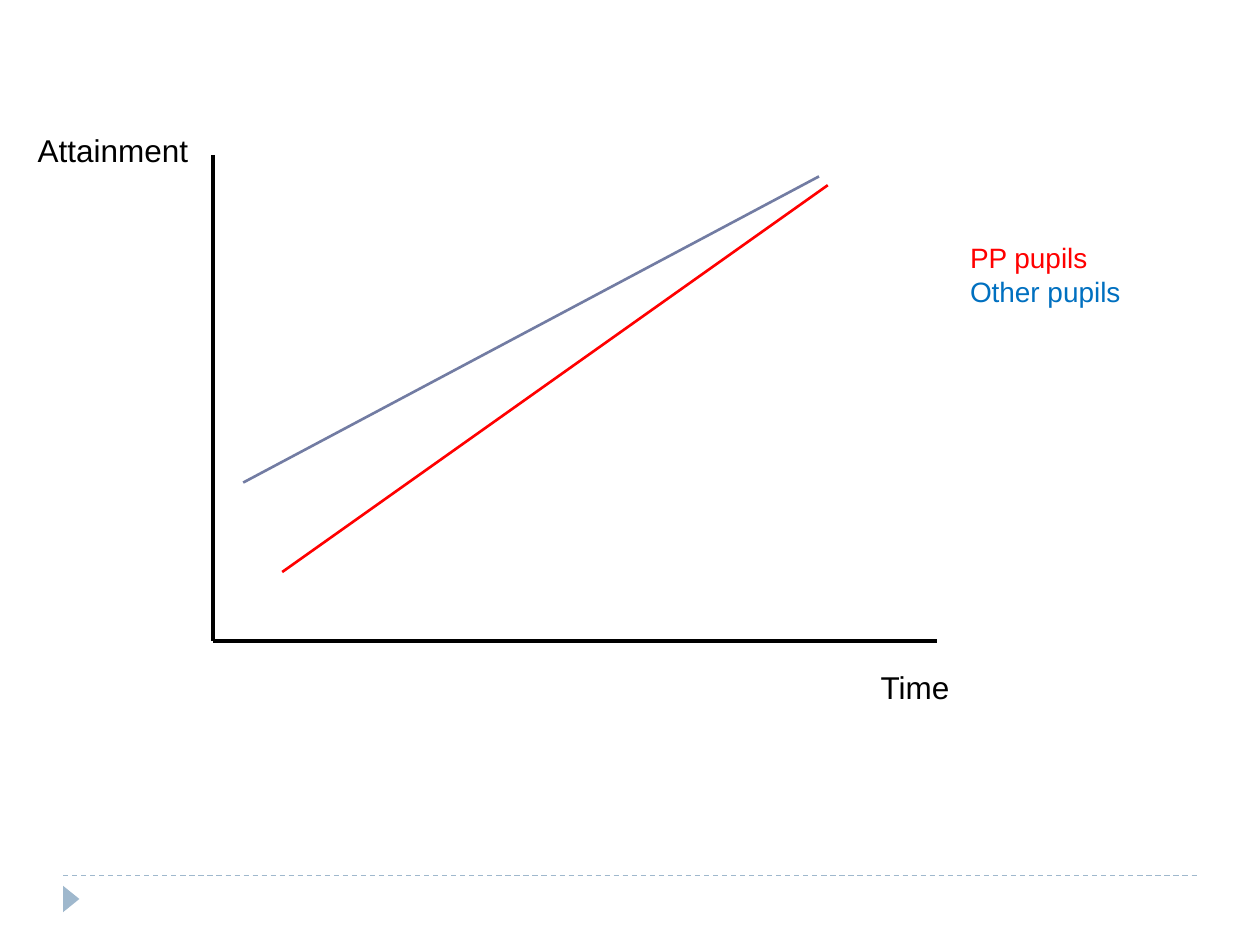
from pptx import Presentation, util as u
from pptx.dml.color import RGBColor
from pptx.enum import dml, shapes, text
from pptx.oxml.ns import qn
from lxml import etree

BLACK, RED, BLUE, PALE = "000000", "FF0000", "0070C0", "9FB8CD"
ORIGIN, TOP, RIGHT = (1.69, 5.09), 1.23, 7.44

LINES = [
    ((0.5, 6.95), (9.5, 6.95), PALE, 0.75, dml.MSO_LINE.DASH),
    ((ORIGIN[0], TOP), ORIGIN, BLACK, 2.25, None),
    (ORIGIN, (RIGHT, ORIGIN[1]), BLACK, 2.25, None),
    ((1.93, 3.83), (6.5, 1.4), "727CA3", 1.5, None),
    ((2.24, 4.54), (6.57, 1.47), RED, 1.5, None),
]
LABELS = [
    (0.2, 0.99, 0.4, 18, [("Attainment", BLACK)]),
    (6.89, 5.25, 0.4, 18, [("Time", BLACK)]),
    (7.6, 1.86, 0.64, 16, [("PP pupils", RED), ("Other pupils", BLUE)]),
]
LABEL_WIDTH = 1.42


def rgb(value):
    return RGBColor.from_string(value)


def inches(*values):
    return [u.Inches(v) for v in values]


def add_line(s, start, end, color, width, dash):
    c = s.shapes.add_connector(shapes.MSO_CONNECTOR.STRAIGHT, *inches(*start, *end))
    c.line.color.rgb = rgb(color)
    for name, value in {"width": u.Pt(width), "dash_style": dash}.items():
        setattr(c.line, name, value)
    etree.SubElement(c._element.spPr, qn("a:effectLst"))


def add_label(s, left, top, height, size, rows):
    tf = s.shapes.add_textbox(*inches(left, top, LABEL_WIDTH, height)).text_frame
    tf.word_wrap = True
    tf.auto_size = text.MSO_AUTO_SIZE.SHAPE_TO_FIT_TEXT
    for i, (words, color) in enumerate(rows):
        p = tf.add_paragraph() if i else tf.paragraphs[0]
        r = p.add_run()
        r.text = words
        for name, value in {"name": "Arial", "size": u.Pt(size)}.items():
            setattr(r.font, name, value)
        r.font.color.rgb = rgb(color)


def add_marker(s):
    sp = s.shapes.add_shape(shapes.MSO_SHAPE.ISOSCELES_TRIANGLE, *inches(0.46, 7.07, 0.21, 0.13))
    sp.rotation = 90
    sp.shadow.inherit = False
    sp.fill.solid()
    sp.fill.fore_color.rgb = rgb(PALE)
    sp.line.fill.background()


def main():
    prs = Presentation()
    prs.slide_width, prs.slide_height = inches(10, 7.5)
    s = prs.slides.add_slide(prs.slide_layouts[6])
    for line in LINES:
        add_line(s, *line)
    add_marker(s)
    for label in LABELS:
        add_label(s, *label)
    prs.save("out.pptx")


if __name__ == "__main__":
    main()
